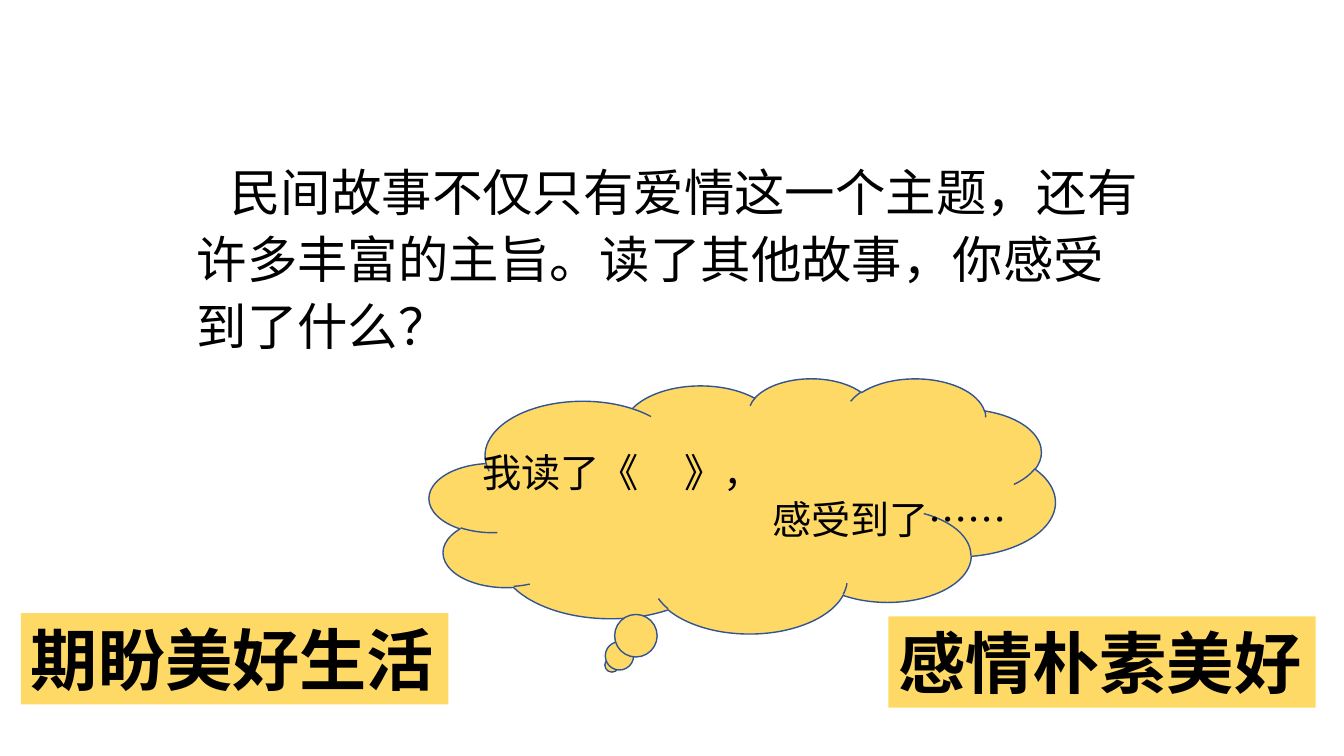
from dataclasses import dataclass

from lxml.etree import SubElement
from pptx import Presentation
from pptx.dml.color import RGBColor
from pptx.enum.shapes import MSO_SHAPE as Preset
from pptx.enum.text import MSO_ANCHOR as Anchor, MSO_AUTO_SIZE as AutoSize, PP_ALIGN as Align
from pptx.oxml.ns import qn
from pptx.util import Pt

EMU_PER_PX = 9525
FONT = "Noto Sans CJK SC"
YELLOW, NAVY, BLACK = "FFD966", "325491", "000000"
PHRASE_START = 276


@dataclass(frozen=True)
class Line:
    text: str
    margin: int = 0
    indent: int = 0
    tab: int = 0


@dataclass(frozen=True)
class TextBox:
    place: tuple[int, int, int, int]
    lines: tuple[Line, ...]
    size: int
    bold: bool = False
    fill: str = ""
    spacing: int = 0


QUESTION = TextBox(
    (178, 142, 924, 204),
    (Line("民间故事不仅只有爱情这一个主题，还有许多丰富的主旨。读了其他故事，你感受到了什么？", indent=32),),
    36,
    spacing=48,
)
CLOUD_PLACE = (409, 360, 596, 243)
CLOUD_TEXT = TextBox(
    (450, 422, 573, 100),
    (Line("我读了《\t》，", tab=PHRASE_START), Line("感受到了……", margin=PHRASE_START)),
    28,
)
LABELS = (
    TextBox((20, 584, 407, 87), (Line("期盼美好生活"),), 48, True, YELLOW),
    TextBox((846, 587, 407, 87), (Line("感情朴素美好"),), 48, True, YELLOW),
)


def px(length: int) -> int:
    return length * EMU_PER_PX


def color(value: str) -> RGBColor:
    return RGBColor.from_string(value)


def write_line(para, line: Line, box: TextBox) -> None:
    props = para._p.get_or_add_pPr()
    props.set("marL", str(px(line.margin)))
    props.set("indent", str(px(line.indent)))
    if line.tab:
        tabs = SubElement(props, qn("a:tabLst"))
        SubElement(tabs, qn("a:tab"), pos=str(px(line.tab)), algn="l")
    para.text = line.text
    para.alignment = Align.LEFT
    if box.spacing:
        para.line_spacing = Pt(box.spacing)
    font = para.font
    font.size = Pt(box.size)
    font.bold = box.bold
    font.color.rgb = color(BLACK)
    font.name = FONT
    SubElement(props.find(qn("a:defRPr")), qn("a:ea"), typeface=FONT)


def add_text(shapes, box: TextBox) -> None:
    shape = shapes.add_textbox(*map(px, box.place))
    if box.fill:
        shape.fill.solid()
        shape.fill.fore_color.rgb = color(box.fill)
    frame = shape.text_frame
    frame.word_wrap = True
    frame.auto_size = AutoSize.SHAPE_TO_FIT_TEXT
    frame.vertical_anchor = Anchor.TOP
    for index, line in enumerate(box.lines):
        para = frame.add_paragraph() if index else frame.paragraphs[0]
        write_line(para, line, box)


def add_cloud(shapes) -> None:
    cloud = shapes.add_shape(Preset.CLOUD_CALLOUT, *map(px, CLOUD_PLACE))
    cloud.shadow.inherit = False
    cloud.fill.solid()
    cloud.fill.fore_color.rgb = color(YELLOW)
    cloud.line.color.rgb = color(NAVY)
    cloud.line.width = Pt(1)


def main() -> None:
    deck = Presentation()
    deck.slide_width, deck.slide_height = px(1280), px(720)
    page = deck.slides.add_slide(deck.slide_layouts[6])
    add_text(page.shapes, QUESTION)
    thought = page.shapes.add_group_shape()
    add_cloud(thought.shapes)
    add_text(thought.shapes, CLOUD_TEXT)
    for label in LABELS:
        add_text(page.shapes, label)
    deck.save("out.pptx")


if __name__ == "__main__":
    main()
